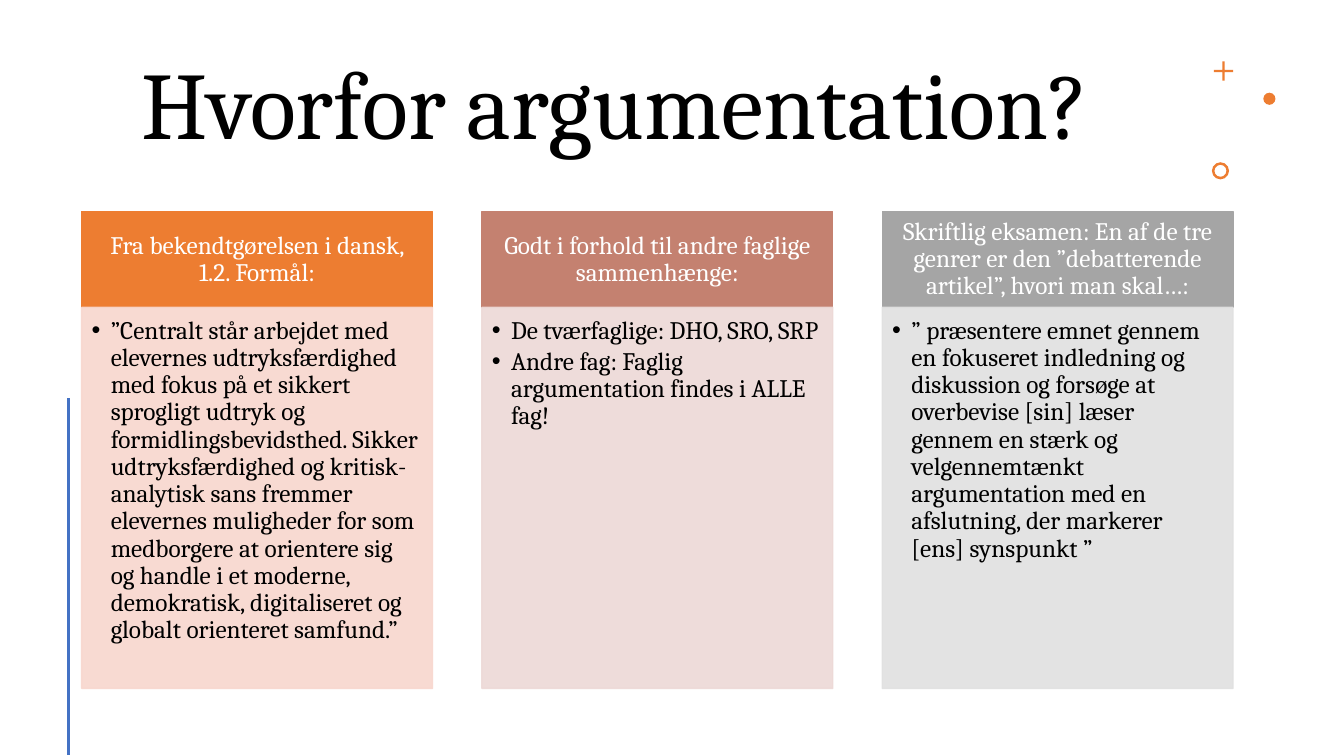
from lxml import etree
from pptx import Presentation
from pptx.dml.color import RGBColor
from pptx.enum.shapes import MSO_CONNECTOR, MSO_SHAPE
from pptx.enum.text import MSO_ANCHOR, MSO_AUTO_SIZE, PP_ALIGN
from pptx.oxml.ns import qn
from pptx.util import Inches, Pt

ORANGE = RGBColor(0xED, 0x7D, 0x31)
ROSE = RGBColor(0xC4, 0x81, 0x70)
GREY = RGBColor(0xA5, 0xA5, 0xA5)
PEACH = RGBColor(0xF8, 0xD7, 0xCE)
PINK = RGBColor(0xED, 0xD9, 0xD7)
SILVER = RGBColor(0xE1, 0xE1, 0xE1)
BLUE = RGBColor(0x44, 0x72, 0xC4)
BLACK = RGBColor(0, 0, 0)
WHITE = RGBColor(0xFF, 0xFF, 0xFF)


def write(shape, lines, size=18, color=BLACK, align=PP_ALIGN.LEFT,
          anchor=MSO_ANCHOR.TOP, inset=(0.1, 0.05, 0.1, 0.05), after=0, bullet=False):
    """Fill a shape with paragraphs; inset is left, top, right, bottom in inches."""
    frame = shape.text_frame
    frame.text = "\n".join(lines)
    frame.word_wrap = True
    frame.auto_size = MSO_AUTO_SIZE.NONE
    frame.vertical_anchor = anchor
    (frame.margin_left, frame.margin_top,
     frame.margin_right, frame.margin_bottom) = map(Inches, inset)
    for para in frame.paragraphs:
        if bullet:
            props = para._p.get_or_add_pPr()
            props.set("marL", str(Inches(0.19)))
            props.set("indent", str(-Inches(0.19)))
            etree.SubElement(props, qn("a:buFont"), typeface="Arial")
            etree.SubElement(props, qn("a:buChar"), char="•")
        para.alignment = align
        para.line_spacing = 0.9
        para.space_before = Pt(0)
        para.space_after = Pt(after)
        para.font.name = "Cambria"
        para.font.size = Pt(size)
        para.font.color.rgb = color


def draw(kind, left, top, width, height, color, edge=False, alpha=100):
    """Add a flat shape, with a 1 pt outline of its own colour if edge is set."""
    shape = slide.shapes.add_shape(
        kind, Inches(left), Inches(top), Inches(width), Inches(height))
    shape.shadow.inherit = False
    shape.fill.solid()
    shape.fill.fore_color.rgb = color
    if edge:
        shape.line.color.rgb = color
        shape.line.width = Pt(1)
    else:
        shape.line.fill.background()
    if alpha < 100:
        for tone in shape._element.spPr.iter(qn("a:srgbClr")):
            etree.SubElement(tone, qn("a:alpha"), val=str(alpha * 1000))
    return shape


deck = Presentation()
deck.slide_width, deck.slide_height = Inches(13.33), Inches(7.5)
slide = deck.slides.add_slide(deck.slide_layouts[5])

title = slide.shapes.title
title.left, title.top = Inches(1.3), Inches(0.42)
title.width, title.height = Inches(10.23), Inches(1.31)
write(title, ["Hvorfor argumentation?"], size=68, anchor=MSO_ANCHOR.MIDDLE)

# Corner ornaments
plus = draw(MSO_SHAPE.CROSS, 12.04, 0.61, 0.19, 0.19, ORANGE)
plus.adjustments[0] = 0.44
draw(MSO_SHAPE.OVAL, 12.53, 0.92, 0.12, 0.12, ORANGE)
ring = draw(MSO_SHAPE.DONUT, 12.02, 1.61, 0.17, 0.17, ORANGE)
ring.adjustments[0] = 0.15

rule = slide.shapes.add_connector(
    MSO_CONNECTOR.STRAIGHT, Inches(0.68), Inches(3.95), Inches(0.68), Inches(7.49))
rule.line.color.rgb = BLUE
rule.line.width = Pt(2)
etree.SubElement(rule._element.spPr, qn("a:effectLst"))

# Three columns: heading above a bulleted panel
columns = [
    (ORANGE, PEACH, "Fra bekendtgørelsen i dansk, 1.2. Formål:", [
        "”Centralt står arbejdet med elevernes udtryksfærdighed med fokus på et "
        "sikkert sprogligt udtryk og formidlingsbevidsthed. Sikker "
        "udtryksfærdighed og kritisk-analytisk sans fremmer elevernes muligheder "
        "for som medborgere at orientere sig og handle i et moderne, "
        "demokratisk, digitaliseret og globalt orienteret samfund.”"]),
    (ROSE, PINK, "Godt i forhold til andre faglige sammenhænge:", [
        "De tværfaglige: DHO, SRO, SRP",
        "Andre fag: Faglig argumentation findes i ALLE fag!"]),
    (GREY, SILVER, "Skriftlig eksamen: En af de tre genrer er den ”debatterende "
     "artikel”, hvori man skal…:", [
         "” præsentere emnet gennem en fokuseret indledning og diskussion og "
         "forsøge at overbevise [sin] læser gennem en stærk og velgennemtænkt "
         "argumentation med en afslutning, der markerer [ens] synspunkt ”"]),
]
for index, (dark, light, heading, points) in enumerate(columns):
    left = 0.81 + index * 3.97
    head = draw(MSO_SHAPE.RECTANGLE, left, 2.1, 3.48, 0.95, dark, edge=True)
    write(head, [heading], color=WHITE, align=PP_ALIGN.CENTER,
          anchor=MSO_ANCHOR.MIDDLE, inset=(0.14, 0.08, 0.14, 0.08))
    panel = draw(MSO_SHAPE.RECTANGLE, left, 3.05, 3.48, 3.78, light, edge=True, alpha=90)
    write(panel, points, inset=(0.1, 0.1, 0.14, 0.16), after=2.7, bullet=True)

deck.save("out.pptx")
